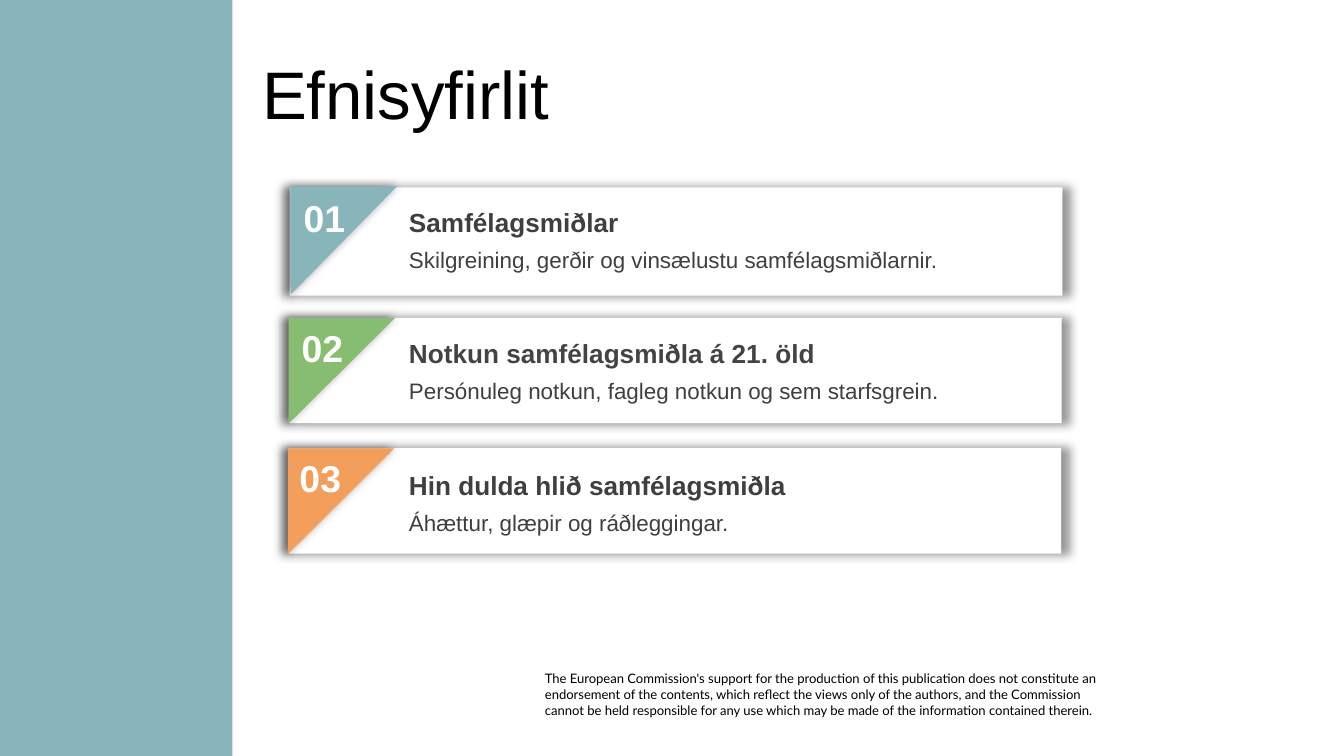
"""Build a table-of-contents slide with three numbered topic cards."""
from typing import NamedTuple

from lxml.etree import SubElement
from pptx import Presentation
from pptx.dml.color import RGBColor
from pptx.enum.shapes import MSO_SHAPE as Preset
from pptx.enum.text import MSO_ANCHOR as Anchor, MSO_AUTO_SIZE as AutoSize, PP_ALIGN as Align
from pptx.oxml.ns import qn
from pptx.util import Pt

PX = 4572
PAGE_WIDTH, PAGE_HEIGHT = 2000, 1125
TEAL = RGBColor(0x87, 0xB5, 0xBA)
GREEN = RGBColor(0x86, 0xBD, 0x70)
ORANGE = RGBColor(0xF3, 0x9E, 0x5A)
WHITE = RGBColor(0xFF, 0xFF, 0xFF)
BLACK = RGBColor(0, 0, 0)
GRAY = RGBColor(0x3F, 0x3F, 0x3F)
LIGHT_GRAY = RGBColor(0x43, 0x43, 0x43)


class Rect(NamedTuple):
    left: int
    top: int
    width: int
    height: int

    def emu(self) -> list[int]:
        return [length * PX for length in self]


class Style(NamedTuple):
    size: int
    color: RGBColor
    bold: bool = False
    name: str = "Arial"


class Topic(NamedTuple):
    heading: str
    summary: str
    color: RGBColor
    height: int = 157
    heading_color: RGBColor = GRAY


TOPICS = [
    Topic("Samfélagsmiðlar", "Skilgreining, gerðir og vinsælustu samfélagsmiðlarnir.", TEAL, 161),
    Topic("Notkun samfélagsmiðla á 21. öld", "Persónuleg notkun, fagleg notkun og sem starfsgrein.",
          GREEN, heading_color=LIGHT_GRAY),
    Topic("Hin dulda hlið samfélagsmiðla", "Áhættur, glæpir og ráðleggingar.", ORANGE),
]
DISCLAIMER = [
    "The European Commission's support for the production of this publication does not constitute "
    "an endorsement of the contents, which reflect the views only of the authors, and the Commission",
    "cannot be held responsible for any use which may be made of the information contained therein.",
]


def write(box, lines: list[str], style: Style, **frame_format) -> None:
    frame = box.text_frame
    settings = {"word_wrap": True, "auto_size": AutoSize.SHAPE_TO_FIT_TEXT,
                "vertical_anchor": Anchor.TOP} | frame_format
    for key, value in settings.items():
        setattr(frame, key, value)
    for index, line in enumerate(lines):
        para = frame.add_paragraph() if index else frame.paragraphs[0]
        para.alignment = Align.LEFT
        span = para.add_run()
        span.text = line
        for key, value in {"size": Pt(style.size), "bold": style.bold, "name": style.name}.items():
            setattr(span.font, key, value)
        span.font.color.rgb = style.color


def add_text(page, rect: Rect, lines: list[str], style: Style, **frame_format) -> None:
    write(page.shapes.add_textbox(*rect.emu()), lines, style, **frame_format)


def add_block(page, preset: Preset, rect: Rect, color: RGBColor):
    shape = page.shapes.add_shape(preset, *rect.emu())
    shape.shadow.inherit = False
    shape.fill.solid()
    shape.fill.fore_color.rgb = color
    shape.line.fill.background()
    return shape


def add_glow(shape) -> None:
    effects = shape._element.spPr.find(qn("a:effectLst"))
    shadow = SubElement(effects, qn("a:outerShdw"), blurRad=str(Pt(5)), sx="102000", sy="102000",
                        algn="ctr", rotWithShape="0")
    color = SubElement(shadow, qn("a:srgbClr"), val="000000")
    SubElement(color, qn("a:alpha"), val="40000")


def add_topic(page, index: int, topic: Topic) -> None:
    left, top = 431 - index, 279 + 194 * index
    text_left, text_top = 589, 297 + 196 * index
    card = add_block(page, Preset.RECTANGLE, Rect(left, top, 1150, topic.height), WHITE)
    corner = add_block(page, Preset.RIGHT_TRIANGLE, Rect(left, top, topic.height, 158), topic.color)
    corner.rotation = 90
    for shape in (card, corner):
        add_glow(shape)
    add_text(page, Rect(432 - 3 * index, top + 1, 116, 88), [f"{index + 1:02}"],
             Style(20, WHITE, True))
    add_text(page, Rect(text_left, text_top, 960, 68), [topic.heading],
             Style(14, topic.heading_color, True))
    add_text(page, Rect(text_left, text_top + 59, 960, 60), [topic.summary], Style(12, GRAY))


def main() -> None:
    deck = Presentation()
    deck.slide_width, deck.slide_height = PAGE_WIDTH * PX, PAGE_HEIGHT * PX
    page = deck.slides.add_slide(deck.slide_layouts[5])
    title = page.shapes.title
    title.left, title.top, title.width, title.height = Rect(370, 75, 1440, 126).emu()
    write(title, ["Efnisyfirlit"], Style(36, BLACK),
          auto_size=AutoSize.NONE, vertical_anchor=Anchor.MIDDLE)
    add_text(page, Rect(811, 998, 834, 70), DISCLAIMER, Style(7, BLACK, name="Lato"),
             margin_left=0, margin_top=0, margin_right=0, margin_bottom=0)
    add_block(page, Preset.RECTANGLE, Rect(0, 0, 346, PAGE_HEIGHT), TEAL)
    for index, topic in enumerate(TOPICS):
        add_topic(page, index, topic)
    deck.save("out.pptx")


if __name__ == "__main__":
    main()
